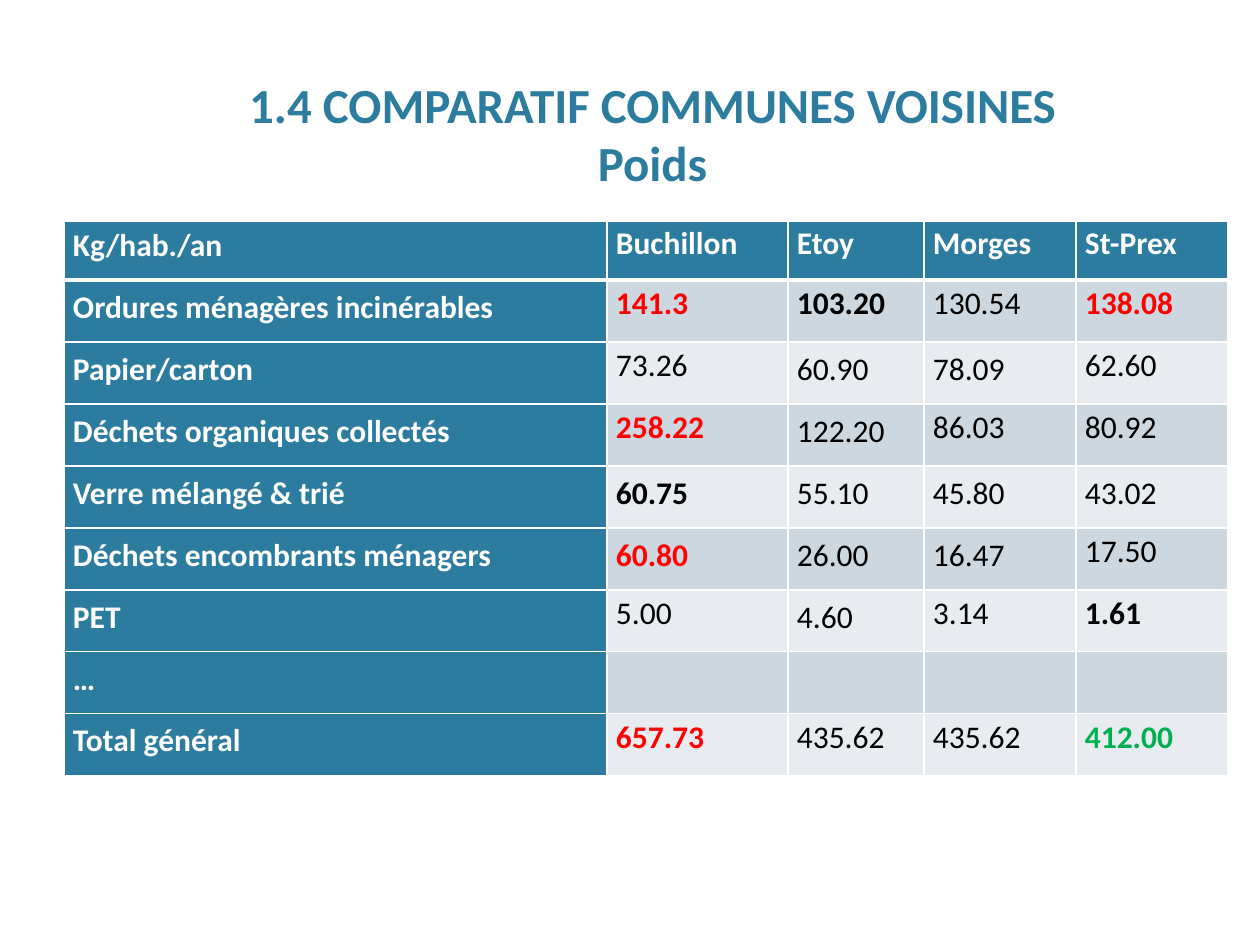
from lxml.etree import SubElement
from pptx import Presentation
from pptx.dml.color import RGBColor
from pptx.enum.text import MSO_ANCHOR, PP_ALIGN
from pptx.oxml.ns import qn
from pptx.util import Emu, Pt

COLORS = {
    "blue": "2C7C9F",
    "white": "FFFFFF",
    "black": "000000",
    "red": "FF0000",
    "green": "00B050",
    "band_dark": "CDD7DF",
    "band_light": "E8ECF0",
}
TITLE_LINES = ["1.4 COMPARATIF COMMUNES VOISINES", "Poids"]
ROWS = [
    ["Kg/hab./an", "Buchillon", "Etoy", "Morges", "St-Prex"],
    ["Ordures ménagères incinérables", "141.3", "103.20", "130.54", "138.08"],
    ["Papier/carton", "73.26", "60.90", "78.09", "62.60"],
    ["Déchets organiques collectés", "258.22", "122.20", "86.03", "80.92"],
    ["Verre mélangé & trié", "60.75", "55.10", "45.80", "43.02"],
    ["Déchets encombrants ménagers", "60.80", "26.00", "16.47", "17.50"],
    ["PET", "5.00", "4.60", "3.14", "1.61"],
    ["…", "", "", "", ""],
    ["Total général", "657.73", "435.62", "435.62", "412.00"],
]
# Bold values and their colours, by (row, column)
HIGHLIGHTS = {
    (1, 1): "red", (1, 2): "black", (1, 4): "red", (3, 1): "red",
    (4, 1): "black", (5, 1): "red", (6, 4): "black",
    (8, 1): "red", (8, 4): "green",
}
# Value columns set with the wider line spacing, by row
WIDE_LINES = {2: (2, 3), 3: (2,), 4: (1, 2, 3, 4), 5: (1, 2, 3), 6: (2,)}
COLUMN_WIDTHS = [543, 181, 136, 152, 152]
ROW_HEIGHTS = [59] + [62] * (len(ROWS) - 1)


def px(value):
    return Emu(round(value * 914400 / 126))


class SlideBuilder:
    font_name = "Calibri"

    def __init__(self, slide):
        self.slide = slide

    def run(self, paragraph, text, size, color, bold):
        run = paragraph.add_run()
        run.text = text
        run.font.name = self.font_name
        run.font.size = Pt(size)
        run.font.bold = bold
        run.font.color.rgb = RGBColor.from_string(COLORS[color])

    def title(self, lines, left, top, width, height):
        shape = self.slide.shapes.title
        shape.left, shape.top = px(left), px(top)
        shape.width, shape.height = px(width), px(height)
        shape.text_frame.vertical_anchor = MSO_ANCHOR.BOTTOM
        paragraph = shape.text_frame.paragraphs[0]
        paragraph.alignment = PP_ALIGN.CENTER
        for index, line in enumerate(lines):
            if index:
                paragraph.add_line_break()
            self.run(paragraph, line, 28, "blue", True)

    def borders(self, cell, row):
        """Draw white cell edges, thicker between the header and the body."""
        widths = {"L": 1, "R": 1, "T": 3 if row == 1 else 1, "B": 3 if row == 0 else 1}
        properties = cell._tc.get_or_add_tcPr()
        for side, width in widths.items():
            line = SubElement(properties, qn(f"a:ln{side}"), w=str(Pt(width)))
            fill = SubElement(line, qn("a:solidFill"))
            SubElement(fill, qn("a:srgbClr"), val=COLORS["white"])

    def cell(self, cell, text, row, column):
        heading = row == 0 or column == 0
        band = "band_dark" if row % 2 else "band_light"
        self.borders(cell, row)
        cell.fill.solid()
        cell.fill.fore_color.rgb = RGBColor.from_string(COLORS["blue" if heading else band])
        cell.vertical_anchor = MSO_ANCHOR.MIDDLE
        cell.margin_left = cell.margin_right = px(9)
        cell.margin_top = cell.margin_bottom = 0
        if not text:
            return
        paragraph = cell.text_frame.paragraphs[0]
        paragraph.alignment = PP_ALIGN.JUSTIFY
        if column == 0:
            paragraph.line_spacing = Pt(18 if row else 17)
            paragraph.space_after = Pt(12)
        else:
            paragraph.line_spacing = Pt(18 if column in WIDE_LINES.get(row, ()) else 13.9)
        color = "white" if heading else HIGHLIGHTS.get((row, column), "black")
        self.run(paragraph, text, 18, color, heading or (row, column) in HIGHLIGHTS)

    def table(self, rows, left, top, column_widths, row_heights):
        table = self.slide.shapes.add_table(
            len(rows), len(column_widths), px(left), px(top),
            px(sum(column_widths)), px(sum(row_heights)),
        ).table
        for column, width in zip(table.columns, column_widths):
            column.width = px(width)
        for row, height in zip(table.rows, row_heights):
            row.height = px(height)
        for row, texts in enumerate(rows):
            for column, text in enumerate(texts):
                self.cell(table.cell(row, column), text, row, column)


def main():
    presentation = Presentation()
    presentation.slide_width, presentation.slide_height = px(1260), px(945)
    builder = SlideBuilder(presentation.slides.add_slide(presentation.slide_layouts[5]))
    builder.title(TITLE_LINES, 76, 24, 1153, 174)
    builder.table(ROWS, 64, 221, COLUMN_WIDTHS, ROW_HEIGHTS)
    presentation.save("out.pptx")


if __name__ == "__main__":
    main()
